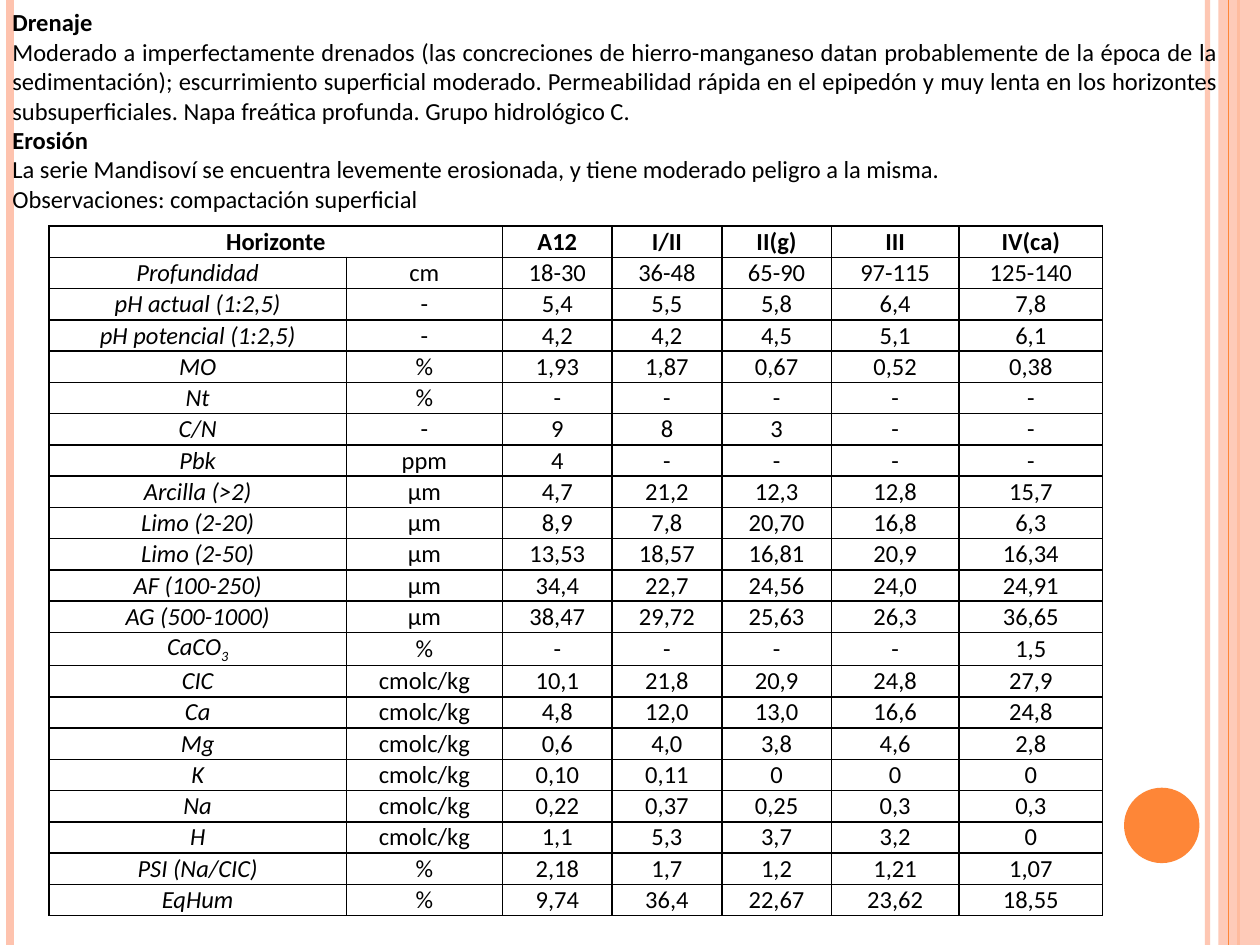
from lxml import etree
from pptx import Presentation
from pptx.dml.color import RGBColor
from pptx.enum.shapes import MSO_CONNECTOR, MSO_SHAPE
from pptx.enum.text import MSO_ANCHOR, PP_ALIGN
from pptx.oxml.ns import qn
from pptx.util import Cm, Pt

STRAIGHT = MSO_CONNECTOR.STRAIGHT
RECTANGLE, OVAL = MSO_SHAPE.RECTANGLE, MSO_SHAPE.OVAL
MIDDLE = MSO_ANCHOR.MIDDLE
CENTER, JUSTIFY = PP_ALIGN.CENTER, PP_ALIGN.JUSTIFY

COLORS = {"peach": "FEC3AE", "orange": "FE8637", "text": "000000"}
FONT = {"name": "Calibri", "size": Pt(14)}
SLIDE_WIDTH, SLIDE_HEIGHT = 25.4, 19.05

DESCRIPTION = [
    ("Drenaje", True),
    ("Moderado a imperfectamente drenados (las concreciones de hierro-manganeso datan "
     "probablemente de la época de la sedimentación); escurrimiento superficial moderado. "
     "Permeabilidad rápida en el epipedón y muy lenta en los horizontes subsuperficiales. "
     "Napa freática profunda. Grupo hidrológico C.", False),
    ("Erosión", True),
    ("La serie Mandisoví se encuentra levemente erosionada, y tiene moderado peligro "
     "a la misma.", False),
    ("Observaciones: compactación superficial", False),
]

HORIZONS = [
    ("Horizonte", "", "A12", "I/II", "II(g)", "III", "IV(ca)"),
    ("Profundidad", "cm", "18-30", "36-48", "65-90", "97-115", "125-140"),
    ("pH actual (1:2,5)", "-", "5,4", "5,5", "5,8", "6,4", "7,8"),
    ("pH potencial (1:2,5)", "-", "4,2", "4,2", "4,5", "5,1", "6,1"),
    ("MO", "%", "1,93", "1,87", "0,67", "0,52", "0,38"),
    ("Nt", "%", "-", "-", "-", "-", "-"),
    ("C/N", "-", "9", "8", "3", "-", "-"),
    ("Pbk", "ppm", "4", "-", "-", "-", "-"),
    ("Arcilla (>2)", "µm", "4,7", "21,2", "12,3", "12,8", "15,7"),
    ("Limo (2-20)", "µm", "8,9", "7,8", "20,70", "16,8", "6,3"),
    ("Limo (2-50)", "µm", "13,53", "18,57", "16,81", "20,9", "16,34"),
    ("AF (100-250)", "µm", "34,4", "22,7", "24,56", "24,0", "24,91"),
    ("AG (500-1000)", "µm", "38,47", "29,72", "25,63", "26,3", "36,65"),
    ("CaCO3", "%", "-", "-", "-", "-", "1,5"),
    ("CIC", "cmolc/kg", "10,1", "21,8", "20,9", "24,8", "27,9"),
    ("Ca", "cmolc/kg", "4,8", "12,0", "13,0", "16,6", "24,8"),
    ("Mg", "cmolc/kg", "0,6", "4,0", "3,8", "4,6", "2,8"),
    ("K", "cmolc/kg", "0,10", "0,11", "0", "0", "0"),
    ("Na", "cmolc/kg", "0,22", "0,37", "0,25", "0,3", "0,3"),
    ("H", "cmolc/kg", "1,1", "5,3", "3,7", "3,2", "0"),
    ("PSI (Na/CIC)", "%", "2,18", "1,7", "1,2", "1,21", "1,07"),
    ("EqHum", "%", "9,74", "36,4", "22,67", "23,62", "18,55"),
]
COLUMN_WIDTHS = [5.99, 3.15, 2.21, 2.21, 2.21, 2.57, 2.9]
ROW_HEIGHT = 0.63
TABLE_LEFT, TABLE_TOP = 0.99, 4.56
CELL_FORMAT = {"margin_left": Cm(0.18), "margin_right": Cm(0.18),
               "margin_top": 0, "margin_bottom": 0, "vertical_anchor": MIDDLE}


def set_format(target, values):
    for name, value in values.items():
        setattr(target, name, value)


def set_alpha(shape, percent):
    color = next(shape._element.spPr.iter(qn("a:srgbClr")))
    etree.SubElement(color, qn("a:alpha"), val=str(percent * 1000))


def add_rule(slide, x, color, width, alpha=100):
    rule = slide.shapes.add_connector(STRAIGHT, Cm(x), 0, Cm(x), Cm(SLIDE_HEIGHT))
    rule.line.width = Pt(width)
    rule.line.color.rgb = RGBColor.from_string(COLORS[color])
    if alpha < 100:
        set_alpha(rule, alpha)
    etree.SubElement(rule._element.spPr, qn("a:effectLst"))


def add_block(slide, kind, box, color, alpha=100):
    shape = slide.shapes.add_shape(kind, *map(Cm, box))
    shape.shadow.inherit = False
    shape.fill.solid()
    shape.fill.fore_color.rgb = RGBColor.from_string(COLORS[color])
    if alpha < 100:
        set_alpha(shape, alpha)
    shape.line.fill.background()


def add_run(paragraph, text, **style):
    run = paragraph.add_run()
    run.text = text
    set_format(run.font, {**FONT, **style})
    run.font.color.rgb = RGBColor.from_string(COLORS["text"])
    return run


def add_borders(cell):
    properties = cell._tc.get_or_add_tcPr()
    for side in ("lnL", "lnR", "lnT", "lnB"):
        border = etree.SubElement(properties, qn(f"a:{side}"), w=str(int(Pt(1))))
        fill = etree.SubElement(border, qn("a:solidFill"))
        etree.SubElement(fill, qn("a:srgbClr"), val=COLORS["text"])


def fill_cell(cell, text, **style):
    set_format(cell, CELL_FORMAT)
    add_borders(cell)
    cell.fill.background()
    paragraph = cell.text_frame.paragraphs[0]
    paragraph.alignment = CENTER
    if text == "CaCO3":
        add_run(paragraph, text[:-1], **style)
        subscript = add_run(paragraph, text[-1], **style)
        subscript._r.get_or_add_rPr().set("baseline", "-25000")
    elif text:
        add_run(paragraph, text, **style)


def add_horizon_table(slide):
    frame = slide.shapes.add_table(
        len(HORIZONS), len(COLUMN_WIDTHS), Cm(TABLE_LEFT), Cm(TABLE_TOP),
        Cm(sum(COLUMN_WIDTHS)), Cm(ROW_HEIGHT * len(HORIZONS)))
    table = frame.table
    set_format(table, {"first_row": False, "horz_banding": False})
    for column, width in zip(table.columns, COLUMN_WIDTHS):
        column.width = Cm(width)
    for row_index, values in enumerate(HORIZONS):
        table.rows[row_index].height = Cm(ROW_HEIGHT)
        header = row_index == 0
        for column_index, text in enumerate(values):
            fill_cell(table.cell(row_index, column_index), text,
                      bold=header, italic=column_index == 0 and not header)
    table.cell(0, 0).merge(table.cell(0, 1))


def add_description(slide):
    box = slide.shapes.add_textbox(0, 0, Cm(24.82), Cm(4.45))
    frame = box.text_frame
    set_format(frame, {"word_wrap": True, "vertical_anchor": MIDDLE})
    for index, (text, bold) in enumerate(DESCRIPTION):
        paragraph = frame.add_paragraph() if index else frame.paragraphs[0]
        paragraph.alignment = JUSTIFY
        add_run(paragraph, text, bold=bold)


def main():
    presentation = Presentation()
    set_format(presentation, {"slide_width": Cm(SLIDE_WIDTH), "slide_height": Cm(SLIDE_HEIGHT)})
    slide = presentation.slides.add_slide(presentation.slide_layouts[6])
    add_rule(slide, 24.34, "peach", 3, alpha=93)
    add_rule(slide, 0.2, "peach", 4.5)
    add_rule(slide, 24.97, "orange", 1.5)
    add_block(slide, RECTANGLE, (24.56, 0, 0.84, SLIDE_HEIGHT), "peach", alpha=87)
    add_rule(slide, 24.77, "orange", 0.75)
    add_block(slide, OVAL, (22.66, 15.88, 1.52, 1.52), "orange")
    add_horizon_table(slide)
    add_description(slide)
    presentation.save("out.pptx")


if __name__ == "__main__":
    main()
